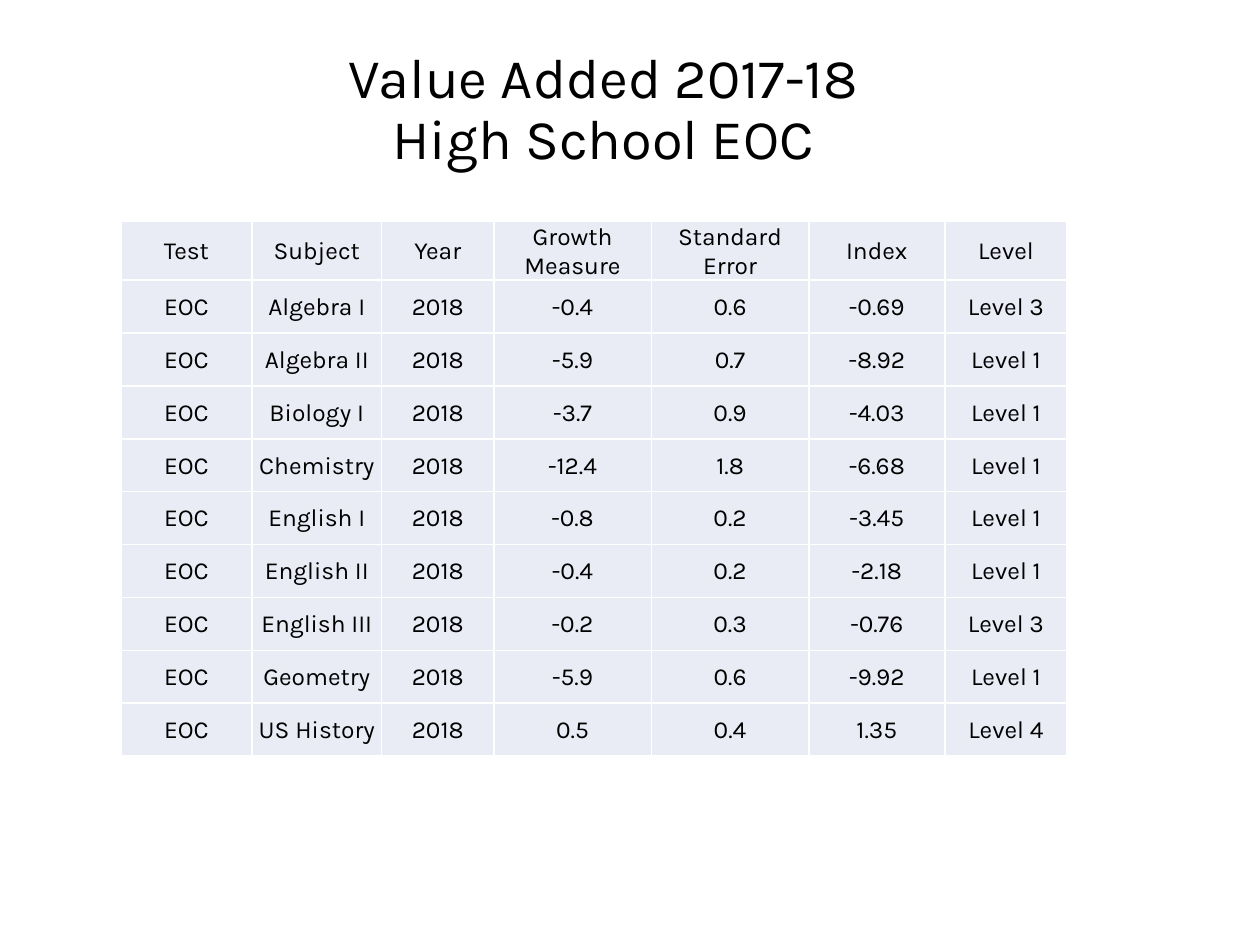
"""Build a slide with a table of high school value-added results."""
import pptx
import pptx.dml.color
import pptx.enum.text
import pptx.oxml
import pptx.oxml.ns
import pptx.util

Inches = pptx.util.Inches
COLOURS = {"text": "000000", "cell": "E9EBF5", "border": "FFFFFF"}
FONT = "Karla"
HEADINGS = ["Test", "Subject", "Year", "Growth Measure", "Standard Error", "Index", "Level"]
RESULTS = [
    ("Algebra I", "-0.4", "0.6", "-0.69", "Level 3"),
    ("Algebra II", "-5.9", "0.7", "-8.92", "Level 1"),
    ("Biology I", "-3.7", "0.9", "-4.03", "Level 1"),
    ("Chemistry", "-12.4", "1.8", "-6.68", "Level 1"),
    ("English I", "-0.8", "0.2", "-3.45", "Level 1"),
    ("English II", "-0.4", "0.2", "-2.18", "Level 1"),
    ("English III", "-0.2", "0.3", "-0.76", "Level 3"),
    ("Geometry", "-5.9", "0.6", "-9.92", "Level 1"),
    ("US History", "0.5", "0.4", "1.35", "Level 4"),
]
COLUMN_WIDTHS = [1.04, 1.03, 0.89, 1.25, 1.25, 1.08, 0.97]
ROW_HEIGHT = 0.42


def format_paragraph(paragraph, size):
    paragraph.alignment = pptx.enum.text.PP_ALIGN.CENTER
    paragraph.font.name = FONT
    paragraph.font.size = pptx.util.Pt(size)
    paragraph.font.color.rgb = pptx.dml.color.RGBColor.from_string(COLOURS["text"])


def add_borders(cell):
    properties = cell._tc.get_or_add_tcPr()
    for side in ("lnL", "lnR", "lnT", "lnB"):
        properties.append(pptx.oxml.parse_xml(
            f'<a:{side} {pptx.oxml.ns.nsdecls("a")} w="{pptx.util.Pt(1)}"><a:solidFill>'
            f'<a:srgbClr val="{COLOURS["border"]}"/></a:solidFill></a:{side}>'))


deck = pptx.Presentation()
deck.slide_width, deck.slide_height = Inches(10), Inches(7.5)
page = deck.slides.add_slide(deck.slide_layouts[5])

title = page.shapes.title
title.left, title.top = Inches(0.48), Inches(0.25)
title.width, title.height = Inches(8.62), Inches(1.26)
title.text_frame.text = "Value Added 2017-18\vHigh School EOC"
title.text_frame.vertical_anchor = pptx.enum.text.MSO_ANCHOR.MIDDLE
title.text_frame.auto_size = pptx.enum.text.MSO_AUTO_SIZE.NONE
heading = title.text_frame.paragraphs[0]
heading.line_spacing = 0.9
format_paragraph(heading, 32)

rows = [HEADINGS] + [("EOC", subject, "2018", *values) for subject, *values in RESULTS]
table = page.shapes.add_table(
    len(rows), len(HEADINGS), Inches(0.96), Inches(1.76),
    Inches(sum(COLUMN_WIDTHS)), Inches(ROW_HEIGHT * len(rows))).table
table.first_row = False
table.horz_banding = False
for column, width in zip(table.columns, COLUMN_WIDTHS):
    column.width = Inches(width)

for row, values in zip(table.rows, rows):
    row.height = Inches(ROW_HEIGHT)
    for cell, value in zip(row.cells, values):
        cell.text = value
        cell.vertical_anchor = pptx.enum.text.MSO_ANCHOR.MIDDLE
        cell.margin_left = cell.margin_right = cell.margin_top = Inches(0.01)
        cell.margin_bottom = Inches(0)
        add_borders(cell)
        cell.fill.solid()
        cell.fill.fore_color.rgb = pptx.dml.color.RGBColor.from_string(COLOURS["cell"])
        format_paragraph(cell.text_frame.paragraphs[0], 14)

deck.save("out.pptx")
